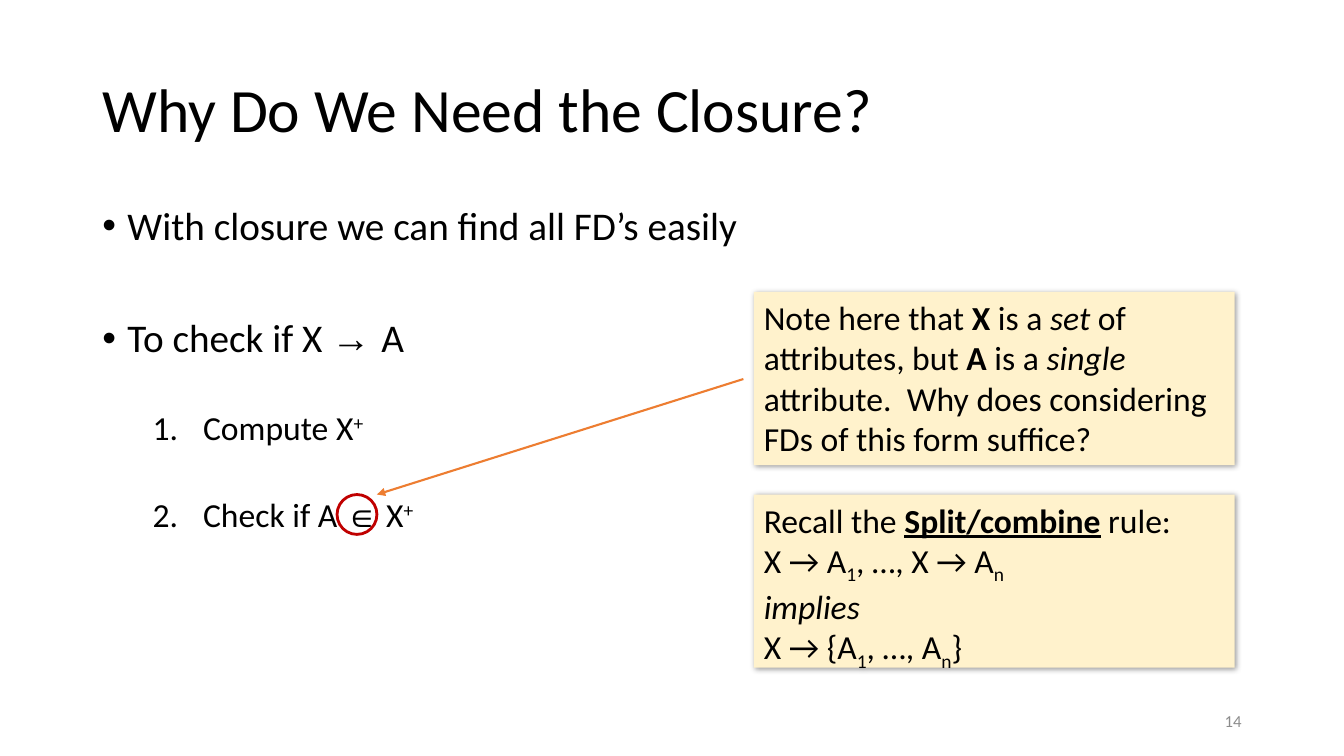
"""Build the slide on why the closure is needed."""
from dataclasses import dataclass

from lxml import etree
from pptx import Presentation
from pptx import util as u
from pptx.dml.color import RGBColor
from pptx.enum import shapes, text
from pptx.oxml.ns import qn

PX = 9525


@dataclass(frozen=True)
class Theme:
    """Colours, fonts and type sizes."""
    ink: str = "000000"
    grey: str = "8C8C8C"
    cream: str = "FFF2CC"
    red: str = "C00000"
    orange: str = "ED7D31"
    font: str = "Calibri"
    sign: str = "Arial"
    title: int = 44
    body: int = 28
    note: int = 24
    small: int = 12


T = Theme()
LEFT, TOP = text.PP_ALIGN.LEFT, text.MSO_ANCHOR.TOP
MID = text.MSO_ANCHOR.MIDDLE
SHIFT = {"sup": "30000", "sub": "-25000"}


def px(*vals):
    """Turn px lengths into EMU."""
    return [u.Emu(v * PX) for v in vals]


def rgb(code):
    """Turn a hex code into a colour."""
    return RGBColor.from_string(code)


def node(parent, tag, **attrs):
    """Add an XML child with attributes."""
    child = etree.SubElement(parent, qn(tag))
    for key, val in attrs.items():
        child.set(key, str(val))
    return child


def add_runs(para, runs, size, color=T.ink):
    """Write runs, each a string or a (string, style) pair."""
    for item in runs:
        words, style = (item, "") if isinstance(item, str) else item
        run = para.add_run()
        run.text = words
        font = run.font
        font.size, font.color.rgb = u.Pt(size), rgb(color)
        font.name = T.sign if style == "sign" else T.font
        font.bold = style in ("bold", "key")
        font.italic = style == "ital"
        font.underline = style == "key"
        if style in SHIFT:
            run._r.get_or_add_rPr().set("baseline", SHIFT[style])


def set_frame(shape, anchor=TOP):
    """Make the text frame wrap and return it."""
    frame = shape.text_frame
    frame.word_wrap = True
    frame.auto_size = text.MSO_AUTO_SIZE.NONE
    frame.vertical_anchor = anchor
    return frame


def add_line(slide, box, runs, size, color=T.ink, align=LEFT, space=1.0):
    """Add a one-line text box, centred in height."""
    frame = set_frame(slide.shapes.add_textbox(*px(*box)), MID)
    para = frame.paragraphs[0]
    para.alignment, para.line_spacing = align, space
    add_runs(para, runs, size, color)


def add_list(slide, box, items):
    """Add bullets at level 0 and numbered steps at level 1."""
    frame = set_frame(slide.shapes.add_textbox(*px(*box)))
    for i, (level, gap, runs) in enumerate(items):
        para = frame.add_paragraph() if i else frame.paragraphs[0]
        para.level, para.line_spacing = level, 0.9
        para.space_before = u.Pt(gap)
        left, hang = px(96, 48) if level else px(24, 24)
        prop = para._p.get_or_add_pPr()
        prop.set("marL", str(left))
        prop.set("indent", str(-hang))
        node(prop, "a:buFont", typeface=T.sign if not level else "+mj-lt")
        if level:
            node(prop, "a:buAutoNum", type="arabicPeriod")
        else:
            node(prop, "a:buChar", char="•")
        add_runs(para, runs, T.note if level else T.body)


def add_note(slide, box, paras):
    """Add a cream note with a soft shadow."""
    note = slide.shapes.add_shape(shapes.MSO_SHAPE.RECTANGLE, *px(*box))
    note.fill.solid()
    note.fill.fore_color.rgb = rgb(T.cream)
    note.line.fill.background()
    note.shadow.inherit = False
    glow = node(note._element.spPr.find(qn("a:effectLst")), "a:outerShdw",
                blurRad=u.Pt(4), dist=u.Pt(1), dir=2700000, algn="tl",
                rotWithShape=0)
    node(node(glow, "a:srgbClr", val=T.ink), "a:alpha", val=40000)
    frame = set_frame(note)
    for i, runs in enumerate(paras):
        para = frame.add_paragraph() if i else frame.paragraphs[0]
        para.alignment = LEFT
        add_runs(para, runs, T.note)


def add_ring(slide, box):
    """Add an unfilled red ring."""
    ring = slide.shapes.add_shape(shapes.MSO_SHAPE.OVAL, *px(*box))
    ring.fill.background()
    ring.line.color.rgb, ring.line.width = rgb(T.red), u.Pt(2)
    ring.shadow.inherit = False


def add_arrow(slide, ends):
    """Add an orange arrow."""
    arrow = slide.shapes.add_connector(
        shapes.MSO_CONNECTOR.STRAIGHT, *px(*ends))
    arrow.line.color.rgb, arrow.line.width = rgb(T.orange), u.Pt(1.5)
    node(arrow.line._get_or_add_ln(), "a:tailEnd", type="triangle")
    node(arrow._element.spPr, "a:effectLst")


def main():
    """Build and save the slide."""
    deck = Presentation()
    deck.slide_width, deck.slide_height = px(1280, 720)
    slide = deck.slides.add_slide(deck.slide_layouts[6])
    add_line(slide, (904, 667, 288, 38), ["14"], T.small, T.grey,
             text.PP_ALIGN.RIGHT)
    add_line(slide, (88, 38, 1104, 139), ["Why Do We Need the Closure?"],
             T.title, space=0.9)
    add_list(slide, (88, 192, 1104, 457), [
        (0, 10, ["With closure we can find all FD’s easily"]),
        (0, 50, ["To check if X ", ("→ ", "sign"), "A"]),
        (1, 36, ["Compute X", ("+", "sup")]),
        (1, 36, ["Check if A ", ("∈", "sign"), " X", ("+", "sup")]),
    ])
    add_note(slide, (718, 278, 458, 165), [
        ["Note here that ", ("X", "bold"), " is a ", ("set", "ital"),
         " of attributes, but ", ("A", "bold"), " is a ",
         ("single", "ital"),
         " attribute.  Why does considering FDs of this form suffice?"],
    ])
    add_ring(slide, (321, 471, 38, 38))
    add_arrow(slide, (708, 361, 359, 471))
    one, last = ("1", "sub"), ("n", "sub")
    add_note(slide, (718, 471, 458, 165), [
        ["Recall the ", ("Split/combine", "key"), " rule:"],
        ["X → A", one, ", …, X → A", last],
        [("implies", "ital")],
        ["X → {A", one, ", …, A", last, "}"],
    ])
    deck.save("out.pptx")


if __name__ == "__main__":
    main()
